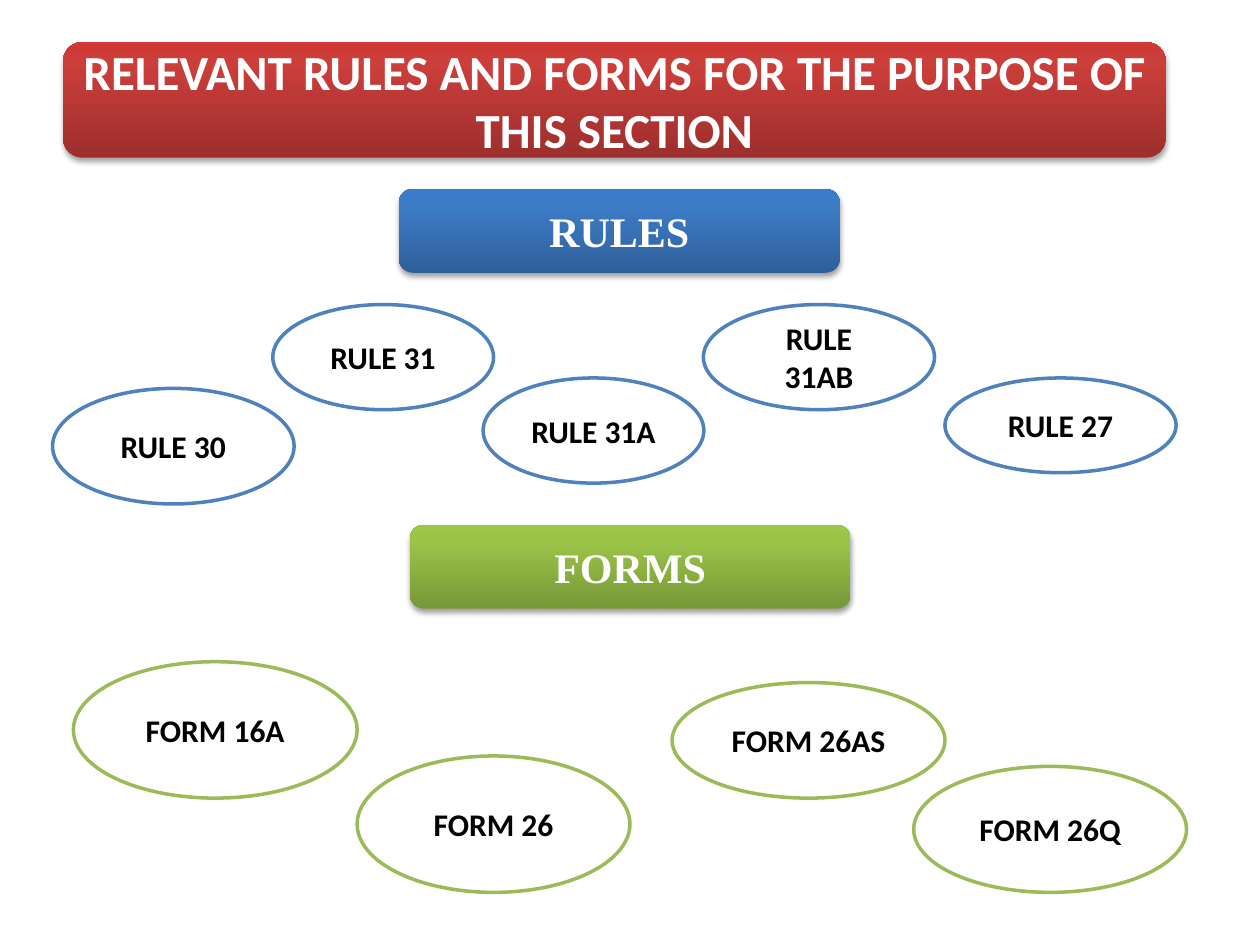
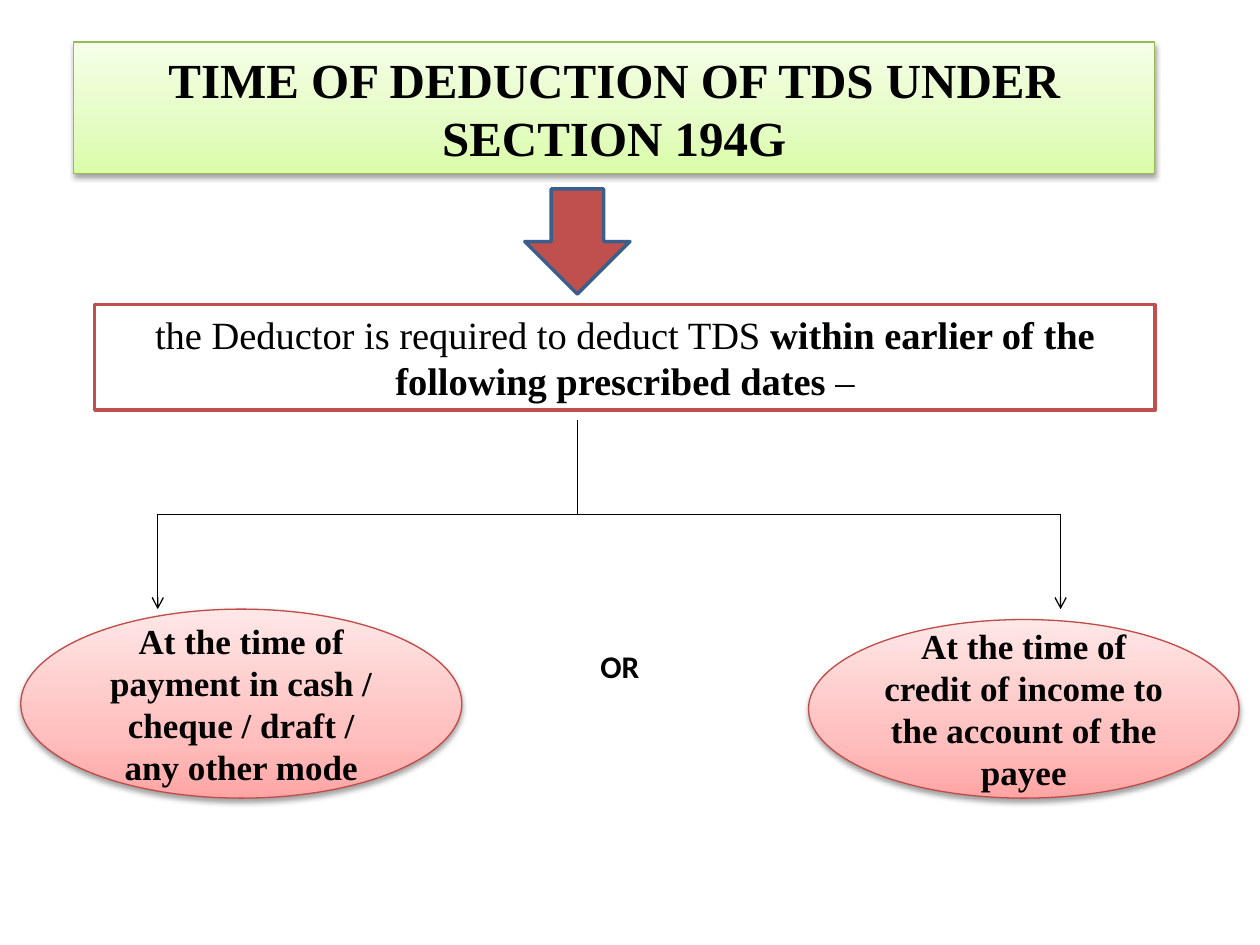
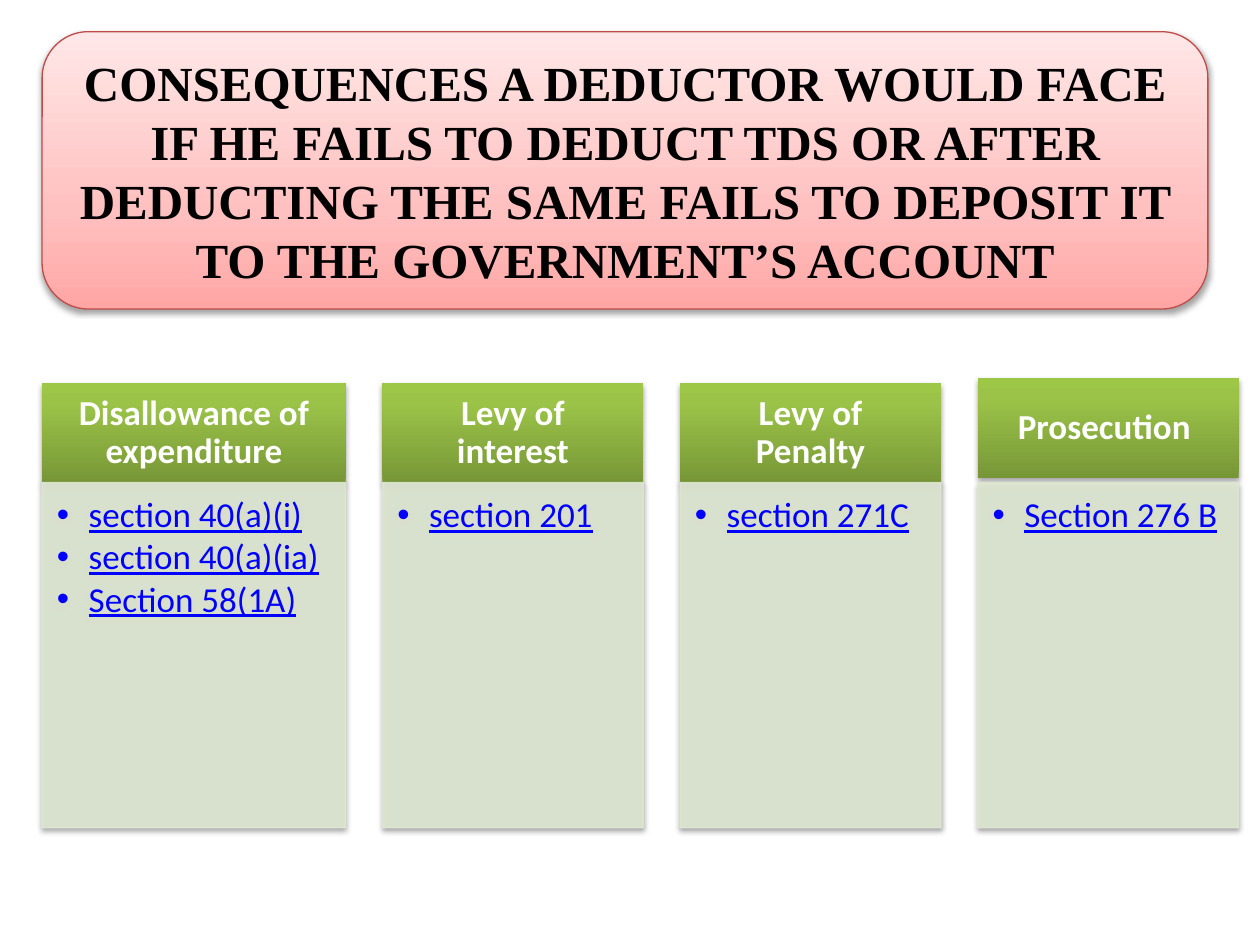
"""Build three slides on tax deduction rules, timing and consequences."""
from lxml.etree import SubElement
from pptx import Presentation
from pptx.dml.color import RGBColor
from pptx.enum.shapes import MSO_CONNECTOR, MSO_SHAPE
from pptx.enum.text import MSO_ANCHOR, PP_ALIGN
from pptx.oxml.ns import qn
from pptx.util import Cm, Pt

RECT = MSO_SHAPE.RECTANGLE
ROUND = MSO_SHAPE.ROUNDED_RECTANGLE
OVAL = MSO_SHAPE.OVAL
ARROW = MSO_SHAPE.DOWN_ARROW
LINE = MSO_CONNECTOR.STRAIGHT
TOP = MSO_ANCHOR.TOP
LEFT, CENTER = PP_ALIGN.LEFT, PP_ALIGN.CENTER

SANS, SERIF = "Calibri", "Times New Roman"
BLACK, WHITE, LINK = "000000", "FFFFFF", "0000FF"
BLUE, GREEN, RED, MINT = "4F81BD", "9BBB59", "C0504D", "DEE7D1"
NAVY, OLIVE, ROSE = "3A5F8C", "98B955", "BF4C48"
DEEP_RED = [(0, "9C2F2D"), (80, "CB3E3A"), (100, "CE3B37")]
DEEP_BLUE = [(0, "2F5F99"), (80, "3D7CC7"), (100, "3A7CCB")]
DEEP_GREEN = [(0, "779737"), (80, "9BC348"), (100, "9DC746")]
PALE_GREEN = [(0, "DAFDA7"), (35, "E4FCC2"), (100, "F5FFE7")]
PALE_RED = [(0, "FFA6A5"), (35, "FFC0BF"), (100, "FFE7E7")]


def draw(slide, kind, box, fill, edge=None, width=0.75, shade=True):
    shape = slide.shapes.add_shape(kind, *map(Cm, box))
    props = shape._element.spPr
    if isinstance(fill, str):
        shape.fill.solid()
        shape.fill.fore_color.rgb = RGBColor.from_string(fill)
    else:
        grad = SubElement(props, qn("a:gradFill"), rotWithShape="1")
        stops = SubElement(grad, qn("a:gsLst"))
        for place, tone in fill:
            stop = SubElement(stops, qn("a:gs"), pos=str(place * 1000))
            SubElement(stop, qn("a:srgbClr"), val=tone)
        SubElement(grad, qn("a:lin"), ang="16200000", scaled="0")
    if edge:
        shape.line.color.rgb = RGBColor.from_string(edge)
        shape.line.width = Pt(width)
    else:
        shape.line.fill.background()
    shape.shadow.inherit = False
    if shade:
        cast = SubElement(props.find(qn("a:effectLst")), qn("a:outerShdw"), blurRad="40000",
                          dist="22000", dir="5400000", rotWithShape="0")
        tone = SubElement(cast, qn("a:srgbClr"), val=BLACK)
        SubElement(tone, qn("a:alpha"), val="36000")
    return shape


def write(para, text, size, face, ink=BLACK, bold=True, align=CENTER):
    para.alignment = align
    run = para.add_run()
    run.text = text
    run.font.size = Pt(size)
    run.font.name = face
    run.font.bold = bold
    run.font.color.rgb = RGBColor.from_string(ink)
    return run


deck = Presentation()
deck.slide_width, deck.slide_height = Cm(25.4), Cm(19.05)
blank = deck.slide_layouts[6]
rules, time, costs = [deck.slides.add_slide(blank) for _ in range(3)]

bands = [
    ("RELEVANT RULES AND FORMS FOR THE PURPOSE OF THIS SECTION",
     (1.27, 0.85, 22.23, 2.33), DEEP_RED, 28, SANS),
    ("RULES", (8.04, 3.81, 8.89, 1.69), DEEP_BLUE, 24, SERIF),
    ("FORMS", (8.26, 10.58, 8.89, 1.69), DEEP_GREEN, 24, SERIF),
]
for text, box, fill, size, face in bands:
    band = draw(rules, ROUND, box, fill)
    write(band.text_frame.paragraphs[0], text, size, face, WHITE)

ovals = [
    ("RULE 30", BLUE, (1.06, 7.83, 4.87, 2.33)),
    ("RULE 31", BLUE, (5.5, 6.14, 4.45, 2.12)),
    ("RULE 31A", BLUE, (9.74, 7.62, 4.45, 2.12)),
    ("RULE 31AB", BLUE, (14.18, 6.14, 4.66, 2.12)),
    ("RULE 27", BLUE, (19.05, 7.62, 4.66, 1.91)),
    ("FORM 16A", GREEN, (1.48, 13.34, 5.72, 2.75)),
    ("FORM 26", GREEN, (7.2, 15.24, 5.5, 2.75)),
    ("FORM 26AS", GREEN, (13.55, 13.76, 5.5, 2.33)),
    ("FORM 26Q", GREEN, (18.42, 15.45, 5.5, 2.54)),
]
for text, edge, box in ovals:
    oval = draw(rules, OVAL, box, WHITE, edge, 2, False)
    write(oval.text_frame.paragraphs[0], text, 18, SANS)

title = draw(time, RECT, (1.48, 0.85, 21.8, 2.65), PALE_GREEN, OLIVE)
write(title.text_frame.paragraphs[0], "TIME OF DEDUCTION OF TDS UNDER SECTION 194G", 28, SERIF)
draw(time, ARROW, (10.58, 3.81, 2.12, 2.12), RED, NAVY, 2, False)
duty = draw(time, RECT, (1.91, 6.14, 21.38, 2.13), WHITE, RED, 2, False)
for text, bold in [("the Deductor is required to deduct TDS ", False),
                   ("within earlier of the following prescribed dates", True),
                   (" –", False)]:
    write(duty.text_frame.paragraphs[0], text, 22, SERIF, bold=bold)

near, mid, far = 3.18, 11.64, 21.38
bar, end = 10.37, 12.28
for ends, tip in [((mid, 8.47, mid, bar), False), ((near, bar, far, bar), False),
                  ((near, bar, near, end), True), ((far, bar, far, end), True)]:
    line = time.shapes.add_connector(LINE, *map(Cm, ends))
    line.line.color.rgb = RGBColor.from_string(BLACK)
    line.line.width = Pt(0.75)
    if tip:
        SubElement(line.line._get_or_add_ln(), qn("a:tailEnd"), type="arrow")
    SubElement(line._element.spPr, qn("a:effectLst"))

for text, box in [
    ("At the time of payment in cash / cheque / draft / any other mode",
     (0.42, 12.28, 8.89, 3.81)),
    ("At the time of credit of income to the account of the payee",
     (16.3, 12.49, 8.68, 3.6)),
]:
    oval = draw(time, OVAL, box, PALE_RED, ROSE)
    write(oval.text_frame.paragraphs[0], text, 20, SERIF)
choice = time.shapes.add_textbox(Cm(10.8), Cm(12.91), Cm(3.39), Cm(1.02)).text_frame
choice.word_wrap = True
write(choice.paragraphs[0], "OR", 18, SANS)

title = draw(costs, ROUND, (0.85, 0.64, 23.5, 5.59), PALE_RED, ROSE)
write(title.text_frame.paragraphs[0],
      "CONSEQUENCES A DEDUCTOR WOULD FACE IF HE FAILS TO DEDUCT TDS OR AFTER DEDUCTING "
      "THE SAME FAILS TO DEPOSIT IT TO THE GOVERNMENT’S ACCOUNT", 28, SERIF)

left, gap = 0.85, 0.74
for name, items, top, width in [
    ("Disallowance of expenditure",
     ["section 40(a)(i)", "section 40(a)(ia)", "Section 58(1A)"], 7.72, 6.12),
    ("Levy of interest", ["section 201"], 7.72, 5.26),
    ("Levy of Penalty", ["section 271C"], 7.72, 5.26),
    ("Prosecution ", ["Section 276 B"], 7.62, 5.26),
]:
    head = draw(costs, RECT, (left, top, width, 2.01), DEEP_GREEN)
    frame = head.text_frame
    frame.margin_left = frame.margin_right = Cm(0.41)
    frame.margin_top = frame.margin_bottom = Cm(0.23)
    frame.paragraphs[0].line_spacing = 0.9
    write(frame.paragraphs[0], name, 20, SANS, WHITE)

    panel = draw(costs, RECT, (left, 9.73, width, 6.96), MINT, MINT)
    for tone in panel._element.spPr.iter(qn("a:srgbClr")):
        if tone.get("val") == MINT:
            SubElement(tone, qn("a:alpha"), val="90000")
    frame = panel.text_frame
    frame.vertical_anchor = TOP
    frame.margin_left = frame.margin_top = Cm(0.3)
    frame.margin_right, frame.margin_bottom = Cm(0.41), Cm(0.43)
    for spot, item in enumerate(items):
        para = frame.add_paragraph() if spot else frame.paragraphs[0]
        para.line_spacing = 0.9
        para.space_after = Pt(2.5)
        write(para, item, 20, SANS, LINK, False, LEFT).font.underline = True
        props = para._p.get_or_add_pPr()
        props.set("marL", str(Cm(0.64)))
        props.set("indent", str(-Cm(0.64)))
        SubElement(props, qn("a:buFont"), typeface="Arial")
        SubElement(props, qn("a:buChar"), char="•")
    left += width + gap

deck.save("out.pptx")
